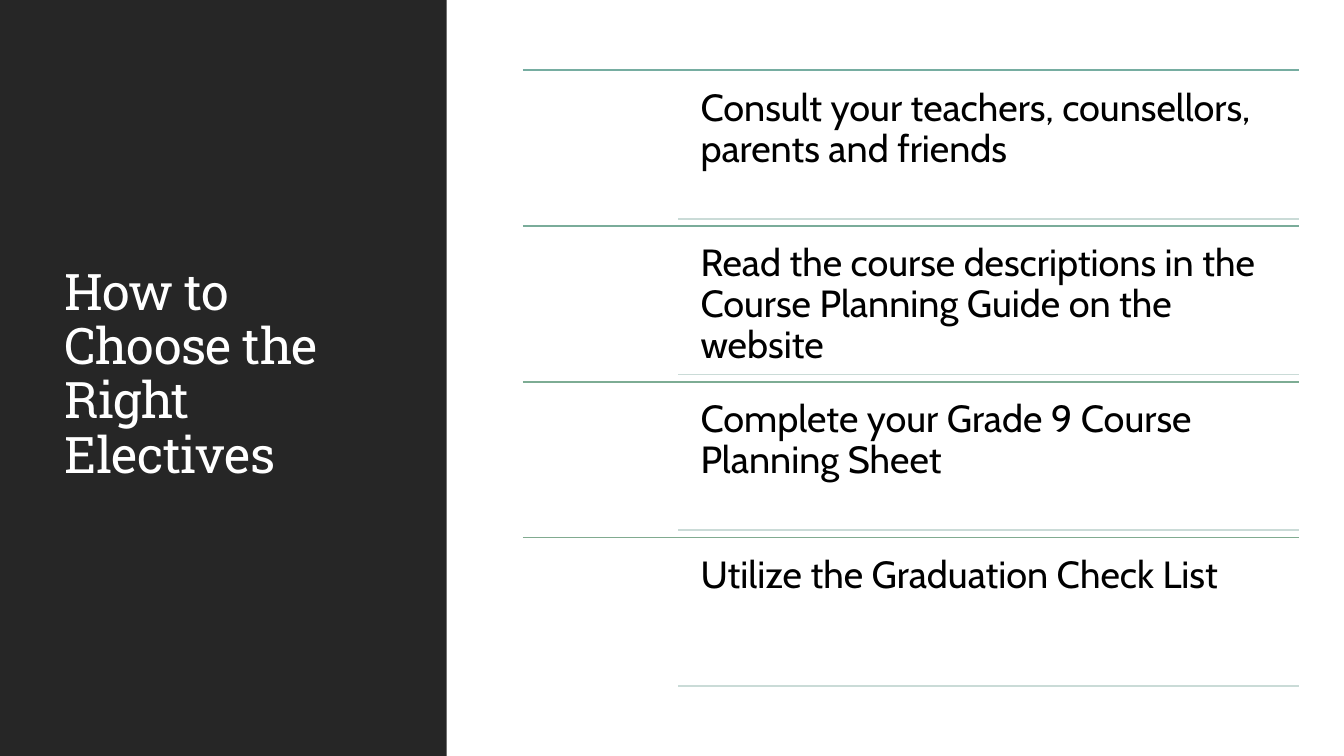
from dataclasses import dataclass

from lxml import etree
from pptx import Presentation
from pptx import util as u
from pptx.dml import color
from pptx.enum import shapes, text
from pptx.oxml import ns


@dataclass(frozen=True)
class Theme:
    panel: str = "262626"
    heading: str = "FFFFFF"
    body: str = "000000"
    step_rules: tuple = ("76ADA1", "7AAC9A", "7DAC94", "81AB90")
    closing_rule: str = "CADBD7"
    rule_width: float = 1.25
    heading_font: str = "Roboto Slab"
    heading_size: int = 36
    body_font: str = "Cabin"
    body_size: int = 27


@dataclass(frozen=True)
class Box:
    left: float
    top: float
    width: float
    height: float

    def lengths(self):
        return [u.Pt(v) for v in (self.left, self.top, self.width, self.height)]


THEME = Theme()
STEPS = (
    "Consult your teachers, counsellors, parents and friends",
    "Read the course descriptions in the Course Planning Guide on the website",
    "Complete your Grade 9 Course Planning Sheet",
    "Utilize the Graduation Check List",
)


def apply(target, values):
    for name, value in values.items():
        setattr(target, name, value)


def write(frame, wording, font, size, ink, inset, anchor):
    apply(frame, {
        "word_wrap": True,
        "auto_size": text.MSO_AUTO_SIZE.NONE,
        "vertical_anchor": anchor,
        **{f"margin_{side}": u.Pt(inset) for side in ("left", "top", "right", "bottom")},
    })
    paragraph = frame.paragraphs[0]
    apply(paragraph, {
        "alignment": text.PP_ALIGN.LEFT,
        "line_spacing": 0.9,
        "space_before": u.Pt(0),
    })
    run = paragraph.add_run()
    run.text = wording
    apply(run.font, {"name": font, "size": u.Pt(size)})
    run.font.color.rgb = color.RGBColor.from_string(ink)
    return run


def add_rule(slide, left, right, y, ink):
    rule = slide.shapes.add_connector(
        shapes.MSO_CONNECTOR.STRAIGHT, u.Pt(left), u.Pt(y), u.Pt(right), u.Pt(y))
    rule.line.width = u.Pt(THEME.rule_width)
    rule.line.color.rgb = color.RGBColor.from_string(ink)
    etree.SubElement(rule.element.spPr, ns.qn("a:effectLst"))


def add_title_panel(slide, box):
    panel = slide.shapes.add_shape(shapes.MSO_SHAPE.RECTANGLE, *box.lengths())
    panel.shadow.inherit = False
    panel.fill.solid()
    panel.fill.fore_color.rgb = color.RGBColor.from_string(THEME.panel)
    panel.line.fill.background()

    title = slide.shapes.title
    title.element.addprevious(panel.element)
    area = Box(box.left + 39, box.top + 41, box.width - 76.4, box.height - 85.6)
    apply(title, dict(zip(("left", "top", "width", "height"), area.lengths())))
    heading = write(title.text_frame, "How to Choose the Right Electives",
                    THEME.heading_font, THEME.heading_size, THEME.heading,
                    7.2, text.MSO_ANCHOR.MIDDLE)
    heading.font.element.set("spc", "-50") if hasattr(heading.font, "element") else \
        heading._r.get_or_add_rPr().set("spc", "-50")


def add_step(slide, box, wording, rule_ink):
    right = box.left + box.width
    indent = box.left + box.width * 0.2
    add_rule(slide, box.left, right, box.top, rule_ink)
    area = Box(indent + 8, box.top + 5, right - indent - 8, 101)
    label = slide.shapes.add_textbox(*area.lengths())
    write(label.text_frame, wording, THEME.body_font, THEME.body_size, THEME.body,
          8, text.MSO_ANCHOR.TOP)
    add_rule(slide, indent, right, box.top + 106, THEME.closing_rule)


def add_steps(slide, box):
    pitch = box.height / len(STEPS)
    for index, (wording, ink) in enumerate(zip(STEPS, THEME.step_rules)):
        add_step(slide, Box(box.left, box.top + index * pitch, box.width, pitch), wording, ink)


def main():
    deck = Presentation()
    apply(deck, {"slide_width": u.Pt(960), "slide_height": u.Pt(540)})
    slide = deck.slides.add_slide(deck.slide_layouts.get_by_name("Title Only"))
    add_title_panel(slide, Box(0, 0, 319, 540))
    add_steps(slide, Box(373.5, 50.2, 554.5, 445))
    deck.save("out.pptx")


if __name__ == "__main__":
    main()
